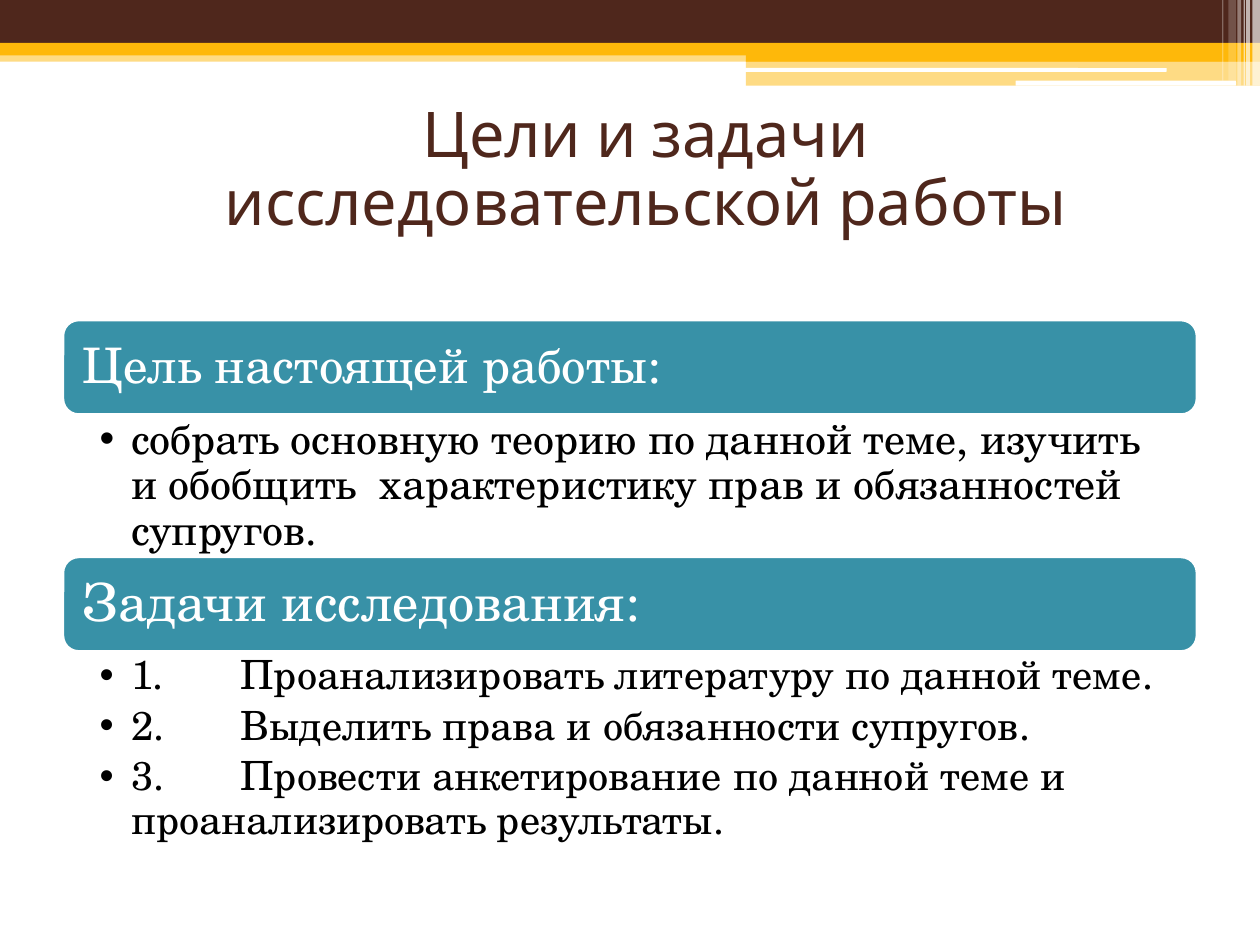
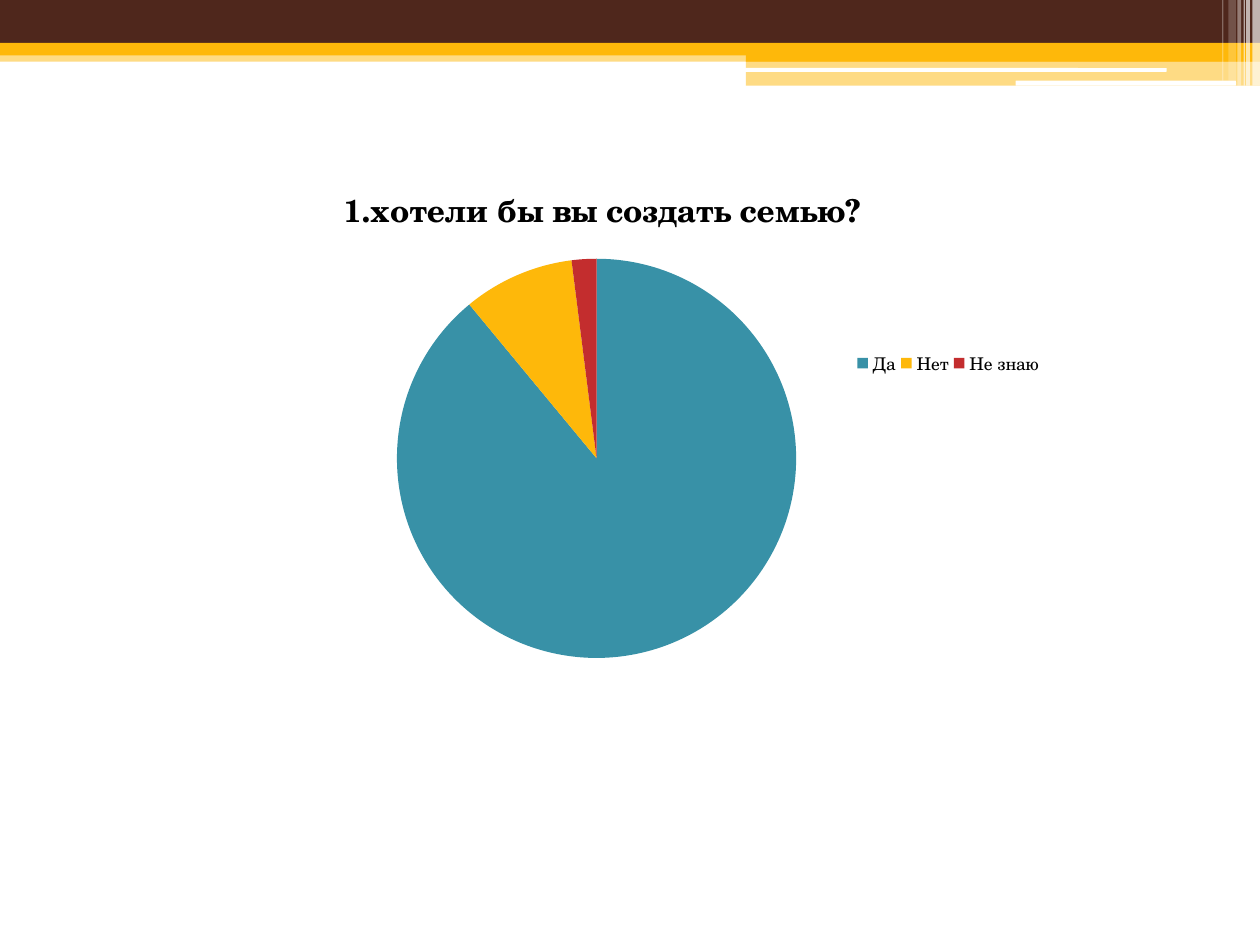
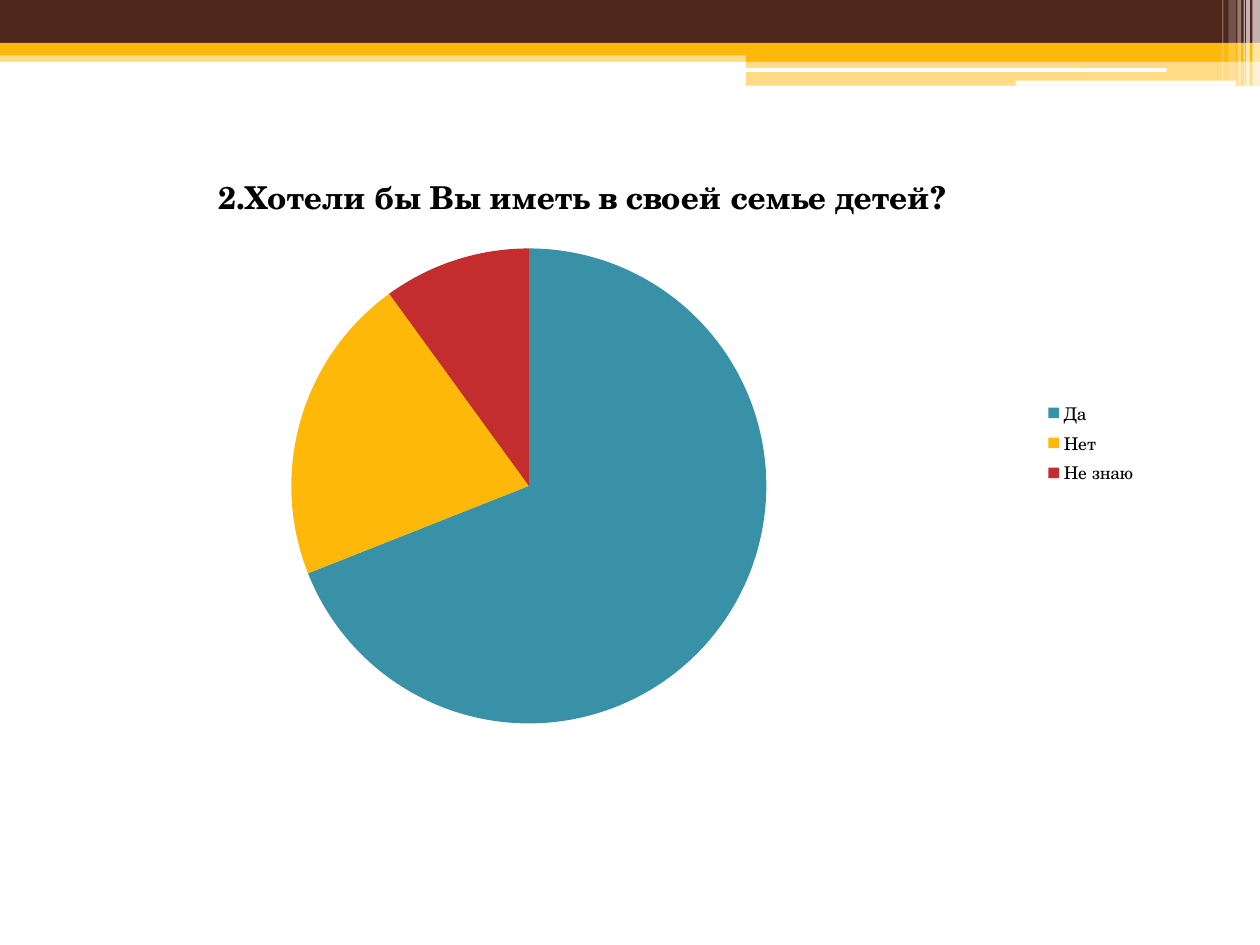
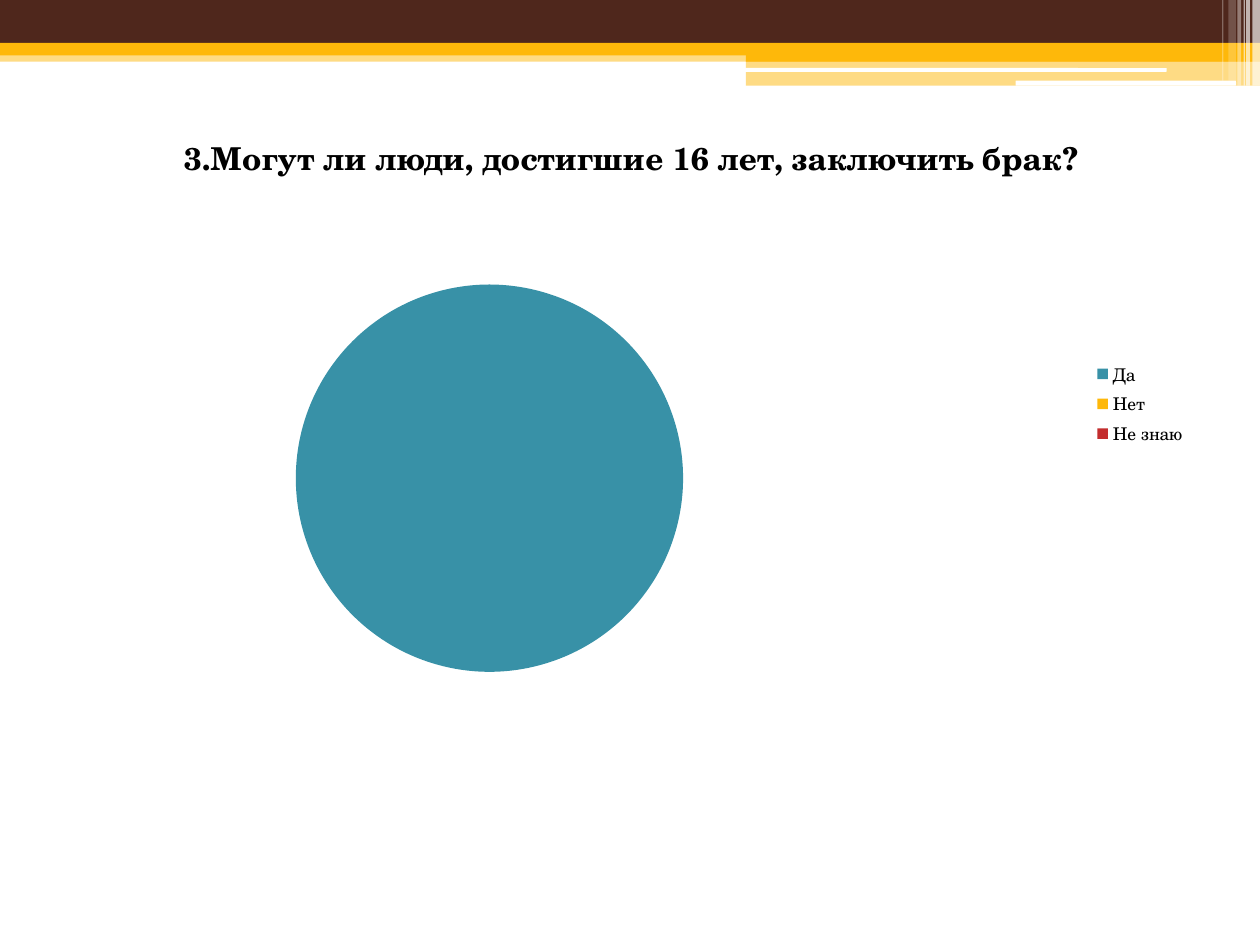
from lxml import etree
from pptx import Presentation
from pptx.chart.data import CategoryChartData
from pptx.dml.color import RGBColor
from pptx.enum.chart import XL_CHART_TYPE, XL_LEGEND_POSITION
from pptx.enum.shapes import MSO_SHAPE
from pptx.enum.text import MSO_ANCHOR, MSO_AUTO_SIZE, PP_ALIGN
from pptx.oxml.ns import qn
from pptx.util import Inches, Pt

RECT, ROUND = MSO_SHAPE.RECTANGLE, MSO_SHAPE.ROUNDED_RECTANGLE
PIE, RIGHT = XL_CHART_TYPE.PIE, XL_LEGEND_POSITION.RIGHT
TOP, MIDDLE = MSO_ANCHOR.TOP, MSO_ANCHOR.MIDDLE
LEFT, CENTER = PP_ALIGN.LEFT, PP_ALIGN.CENTER
NO_FIT = MSO_AUTO_SIZE.NONE

COLORS = {"brown": "4F271C", "gold": "FEB80A", "teal": "3891A7",
          "red": "C32D2E", "white": "FFFFFF", "black": "000000"}
HEAD_FONT, BODY_FONT = "Karla", "TeX Gyre Schola"
TWO_LISTS, BLANK = 3, 6

# kind, box, colour, opacity in percent
BANDS = [
    (RECT, (0, 0.4, 10, 0.09), "gold", 50),
    (RECT, (0, 0, 10, 0.34), "brown", 100),
    (RECT, (0, 0.34, 10, 0.1), "gold", 100),
    (RECT, (5.92, 0.39, 4.08, 0.1), "gold", 100),
    (RECT, (5.92, 0.48, 4.08, 0.2), "gold", 50),
    (ROUND, (5.91, 0.54, 3.35, 0.03), "white", 100),
    (ROUND, (8.06, 0.64, 1.75, 0.04), "white", 100),
    (RECT, (9.94, 0, 0.06, 0.68), "white", 65),
    (RECT, (9.89, 0, 0.03, 0.68), "white", 65),
    (RECT, (9.87, 0, 0.01, 0.68), "white", 60),
    (RECT, (9.82, 0, 0.03, 0.68), "white", 40),
    (RECT, (9.75, 0, 0.06, 0.64), "white", 20),
    (RECT, (9.7, 0, 0.01, 0.64), "white", 30),
]

GOALS = [
    ("Цель настоящей работы:", 28, 2.54, 24, 1.12,
     ["собрать основную теорию по данной теме, изучить и обобщить  "
      "характеристику прав и обязанностей супругов."]),
    ("Задачи исследования:", 30, 4.42, 23, 1.94,
     ["1.\tПроанализировать литературу по данной теме.",
      "2.\tВыделить права и обязанности супругов.",
      "3.\tПровести анкетирование по данной теме и "
      "проанализировать результаты."]),
]

ANSWERS = ["Да", "Нет", "Не знаю"]
# question, left, top, values, plot layout, legend layout
POLLS = [
    ("1.хотели бы вы создать семью?", 0.28, 1.25, (89, 9, 2),
     (0.15, 0.17, 0.69, 0.67), (0.72, 0.32, 0.17, 0.05)),
    ("2.Хотели бы Вы иметь в своей семье детей?", 0.12, 1.15, (69, 21, 10),
     None, None),
    ("3.Могут ли люди, достигшие 16 лет, заключить брак?", 0.51, 0.84,
     (100, 0, 0), (0.13, 0.3, 0.49, 0.65), None),
]


def paint(fill, color):
    fill.solid()
    fill.fore_color.rgb = RGBColor.from_string(COLORS[color])


def set_font(font, size, color="black", name=BODY_FONT, bold=False):
    font.size, font.name, font.bold = Pt(size), name, bold
    font.color.rgb = RGBColor.from_string(COLORS[color])


def write(frame, *lines, size, color="black", name=BODY_FONT, align=LEFT,
          anchor=TOP, pad=(0.12, 0.12, 0.12, 0.12), after=0, bullet=False):
    """Fill a text frame, one paragraph a line; pad is left, top, right, bottom."""
    frame.word_wrap, frame.auto_size = True, NO_FIT
    frame.vertical_anchor = anchor
    (frame.margin_left, frame.margin_top,
     frame.margin_right, frame.margin_bottom) = map(Inches, pad)
    frame.text = "\n".join(lines)
    for para in frame.paragraphs:
        para.alignment, para.line_spacing = align, 0.9
        para.space_before, para.space_after = Pt(0), Pt(after)
        set_font(para.runs[0].font, size, color, name)
        if bullet:
            add_bullet(para, size)


def add_bullet(para, size):
    para.level = 1
    props = para.runs[0].font._element.getparent().getparent().get_or_add_pPr()
    props.set("marL", str(Inches(0.25)))
    props.set("indent", str(Inches(-0.25)))
    props.set("defTabSz", str(int(Pt(size * 3.5))))
    etree.SubElement(props, qn("a:buFont")).set("typeface", "Arial")
    etree.SubElement(props, qn("a:buChar")).set("char", "•")


def set_layout(node, index, box, inner=False):
    """Fix the place of a chart part, as shares of the chart."""
    for old in node.findall(qn("c:layout")):
        node.remove(old)
    layout = etree.Element(qn("c:layout"))
    manual = etree.SubElement(layout, qn("c:manualLayout"))
    parts = [("layoutTarget", "inner")] if inner else []
    parts += [("xMode", "edge"), ("yMode", "edge"), *zip("xywh", box)]
    for tag, value in parts:
        etree.SubElement(manual, qn("c:" + tag)).set("val", str(value))
    node.insert(index, layout)


class Deck:
    def __init__(self):
        self.file = Presentation()
        self.file.slide_width, self.file.slide_height = Inches(10), Inches(7.5)
        self.slide = None

    def start(self, layout):
        self.slide = self.file.slides.add_slide(self.file.slide_layouts[layout])

    def shape(self, kind, box, color, alpha=100, edge=None):
        shape = self.slide.shapes.add_shape(kind, *map(Inches, box))
        shape.shadow.inherit = False
        paint(shape.fill, color)
        if alpha < 100:
            tint = shape.element.spPr.find(qn("a:solidFill"))[0]
            etree.SubElement(tint, qn("a:alpha")).set("val", str(alpha * 1000))
        if edge:
            paint(shape.line.fill, edge)
            shape.line.width = Pt(1.5)
        else:
            shape.line.fill.background()
        return shape

    def bands(self):
        """Draw the bands, then move them behind the master's placeholders."""
        tree = self.file.slide_master.shapes.element
        for index, band in enumerate(BANDS, 2):
            tree.insert(index, self.shape(*band).element)

    def holder(self, index, box, *lines, **style):
        shape = self.slide.placeholders[index]
        shape.left, shape.top, shape.width, shape.height = map(Inches, box)
        write(shape.text_frame, *lines, **style)

    def title(self, text):
        self.holder(0, (0.75, 1.25, 8.75, 0.22), text, size=36, color="brown",
                    name=HEAD_FONT, align=CENTER, anchor=MIDDLE,
                    pad=(0.3, 0.05, 0.3, 0.05))

    def card(self, text, top, size):
        shape = self.shape(ROUND, (0.5, top, 9, 0.75), "teal", edge="white")
        write(shape.text_frame, text, size=size, color="white", anchor=MIDDLE)

    def list(self, index, lines, top, height, size):
        self.holder(index, (0.5, top, 9, height), *lines, size=size,
                    pad=(0.29, 0.03, 0.2, 0.03), after=4, bullet=True)

    def pie(self, title, left, top, values, plot_box, key_box):
        data = CategoryChartData()
        data.categories = ANSWERS
        data.add_series("Series 1", values)
        box = map(Inches, (left, top, 9, 4.73))
        chart = self.slide.shapes.add_chart(PIE, *box, data).chart
        set_font(chart.font, 10)
        chart.has_title = True
        chart.chart_title.include_in_layout = False
        head = chart.chart_title.text_frame
        head.text = title
        set_font(head.paragraphs[0].runs[0].font, 18, bold=True)
        chart.has_legend = True
        chart.legend.position = RIGHT
        chart.legend.include_in_layout = False
        plot = chart.plots[0]
        plot.vary_by_categories = True
        for index, color in enumerate(("teal", "gold", "red")):
            slice_ = plot.series[0].points[index].format
            paint(slice_.fill, color)
            slice_.line.fill.background()
        if plot_box:
            area = chart.element.find(".//" + qn("c:plotArea"))
            set_layout(area, 0, plot_box, inner=True)
        if key_box:
            set_layout(chart.element.find(".//" + qn("c:legend")), 1, key_box)


def main():
    deck = Deck()
    deck.start(TWO_LISTS)
    deck.bands()
    deck.title("Цели и задачи исследовательской работы")
    for index, (head, head_size, top, size, height, lines) in enumerate(GOALS, 1):
        deck.card(head, top, head_size)
        deck.list(index, lines, top + 0.75, height, size)
    for poll in POLLS:
        deck.start(BLANK)
        deck.pie(*poll)
    deck.file.save("out.pptx")


if __name__ == "__main__":
    main()
